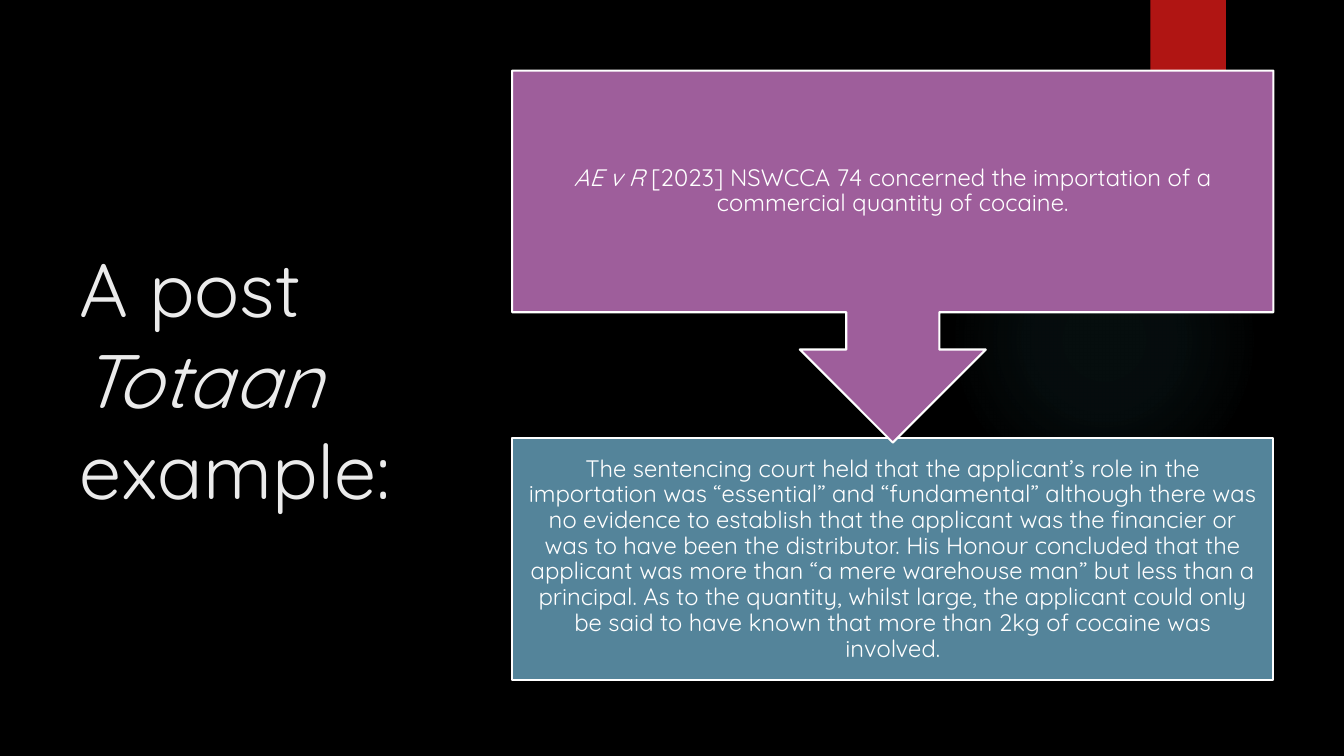
"""Builds a slide on a sentencing example: a title beside two boxes linked by an arrow."""
from lxml.etree import SubElement
from pptx import Presentation
from pptx.dml.color import RGBColor
from pptx.enum.shapes import MSO_SHAPE
from pptx.enum.text import MSO_ANCHOR, MSO_AUTO_SIZE, PP_ALIGN
from pptx.oxml.ns import qn
from pptx.util import Inches, Pt

COLORS = {
    "background": "000000",
    "glow": "50B9C1",
    "tab": "B01513",
    "title": "EBEBEB",
    "case": "9E5E9B",
    "finding": "54849A",
    "white": "FFFFFF",
}
FONT = "Quicksand"
CELL = Inches(0.1)
TOP, BOX_LEFT, BOX_WIDTH, BOX_HEIGHT = 7, 50.8, 75.5, 24
FINDING_TOP, CALLOUT_HEIGHT = 43.5, 36.9


def add_block(kind, left, top, width, height, color):
    """Add a filled preset shape placed in grid cells."""
    block = page.shapes.add_shape(kind, *(round(cells * CELL) for cells in (left, top, width, height)))
    block.shadow.inherit = False
    block.fill.solid()
    block.fill.fore_color.rgb = RGBColor.from_string(COLORS[color])
    block.line.fill.background()
    return block


def write_runs(paragraph, pieces, size, color):
    """Write (text, italic) pieces into a paragraph."""
    for text, italic in pieces:
        span = paragraph.add_run()
        span.text = text
        span.font.name = FONT
        span.font.size = Pt(size)
        span.font.italic = italic
        span.font.color.rgb = RGBColor.from_string(COLORS[color])


deck = Presentation()
deck.slide_width, deck.slide_height = Inches(13.33), Inches(7.5)
page = deck.slides.add_slide(deck.slide_layouts[5])
page.background.fill.solid()
page.background.fill.fore_color.rgb = RGBColor.from_string(COLORS["background"])

glow = add_block(MSO_SHAPE.OVAL, 94.1, 18.3, 30.8, 30.8, "glow")
glow.fill.gradient()
gradient = glow.fill._xPr.find(qn("a:gradFill"))
for child in list(gradient):
    gradient.remove(child)
stops = SubElement(gradient, qn("a:gsLst"))
for position, opacity in ((0, 7), (36, 6), (69, 0)):
    stop = SubElement(stops, qn("a:gs"), pos=str(position * 1000))
    tint = SubElement(stop, qn("a:srgbClr"), val=COLORS["glow"])
    SubElement(tint, qn("a:alpha"), val=str(opacity * 1000))
circle = SubElement(gradient, qn("a:path"), path="circle")
SubElement(circle, qn("a:fillToRect"), l="50000", t="50000", r="50000", b="50000")

add_block(MSO_SHAPE.RECTANGLE, 114.1, 0, 7.5, 12.5, "tab")

title = page.shapes.title
title.left, title.top, title.width, title.height = (round(cells * CELL) for cells in (6.9, TOP, 37.4, 61.1))
title.text_frame.word_wrap = True
title.text_frame.auto_size = MSO_AUTO_SIZE.NONE
title.text_frame.vertical_anchor = MSO_ANCHOR.MIDDLE
heading = title.text_frame.paragraphs[0]
heading.alignment = PP_ALIGN.LEFT
write_runs(heading, [("A post ", False), ("Totaan", True), (" example:", False)], 54, "title")

finding = (
    "The sentencing court held that the applicant’s role in the importation was “essential” and "
    "“fundamental” although there was no evidence to establish that the applicant was the financier "
    "or was to have been the distributor. His Honour concluded that the applicant was more than "
    "“a mere warehouse man” but less than a principal. As to the quantity, whilst large, the "
    "applicant could only be said to have known that more than 2kg of cocaine was involved."
)
case = "[2023] NSWCCA 74 concerned the importation of a commercial quantity of cocaine."
steps = [
    (MSO_SHAPE.RECTANGLE, FINDING_TOP, BOX_HEIGHT, "finding", [(finding, False)]),
    (MSO_SHAPE.DOWN_ARROW_CALLOUT, TOP, CALLOUT_HEIGHT, "case", [("AE v R ", True), (case, False)]),
]
for kind, top, height, color, pieces in steps:
    box = add_block(kind, BOX_LEFT, top, BOX_WIDTH, height, color)
    box.line.color.rgb = RGBColor.from_string(COLORS["white"])
    box.line.width = Pt(1.5)
    frame = box.text_frame
    frame.word_wrap = True
    frame.vertical_anchor = MSO_ANCHOR.MIDDLE
    frame.margin_left = frame.margin_right = frame.margin_top = frame.margin_bottom = Inches(0.13)
    para = frame.paragraphs[0]
    para.alignment = PP_ALIGN.CENTER
    para.line_spacing = 0.9
    write_runs(para, pieces, 17, "white")

deck.save("out.pptx")
